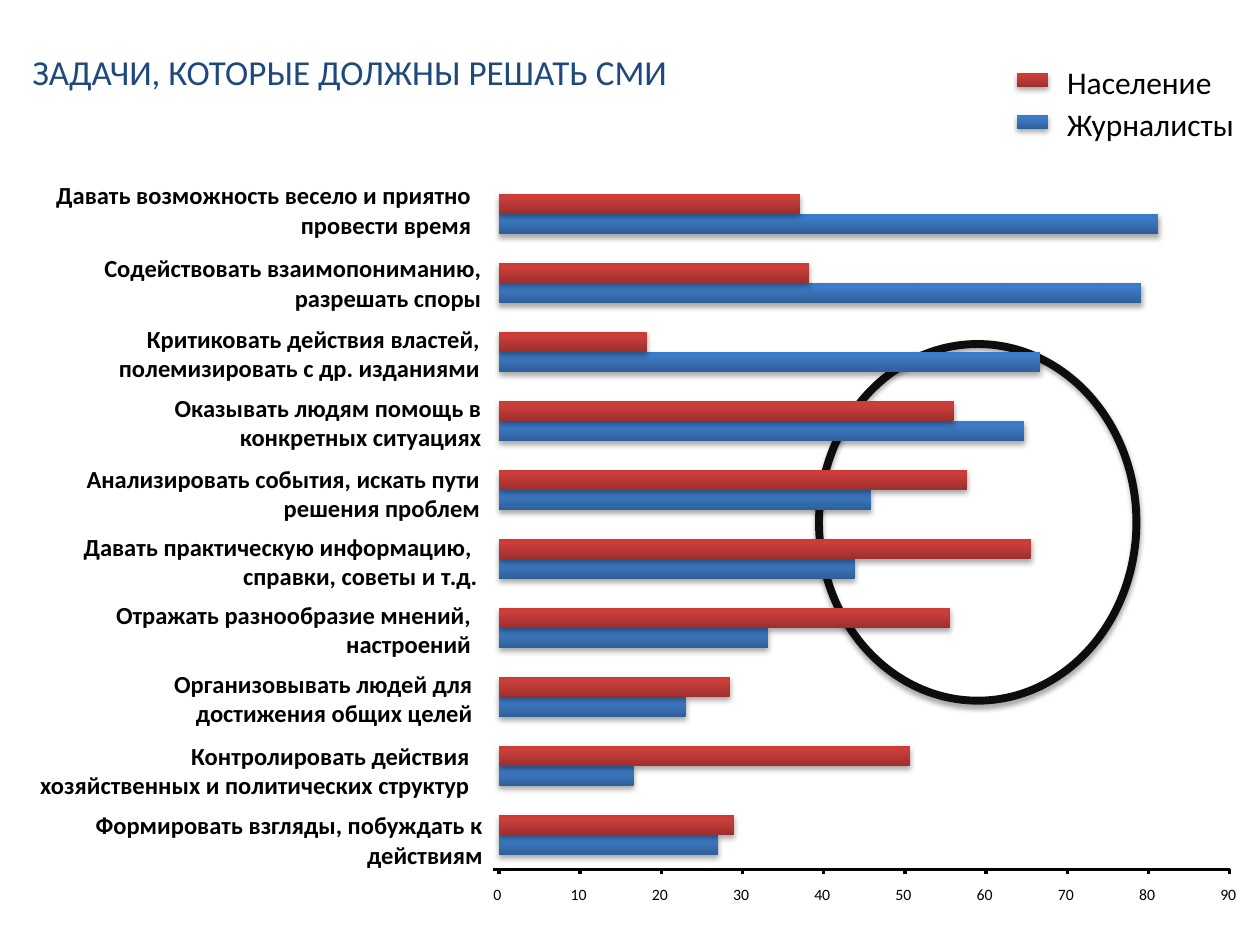
from dataclasses import dataclass

from lxml import etree
from pptx import Presentation
from pptx import util as u
from pptx.dml.color import RGBColor
from pptx.enum import shapes, text
from pptx.oxml.ns import nsdecls


@dataclass(frozen=True)
class Theme:
    font: str = "Calibri"
    title: str = "1F497D"
    ink: str = "000000"
    ring: str = "0D0D0D"
    # Gradient colours at 0, 80 and 100 percent
    red: tuple = ("9C2F2D", "CB3E3A", "CE3B37")
    blue: tuple = ("2F5F99", "3D7CC7", "3A7CCB")
    title_size: int = 20
    legend_size: int = 18
    label_size: int = 14
    tick_size: int = 9


T = Theme()

# Label lines, label left, top and width, share of population, share of journalists
TASKS = [
    (["Давать возможность весело и приятно провести время"],
     17.3, 103, 252, 37.1, 81.2),
    (["Содействовать взаимопониманию, разрешать споры"],
     17.3, 144.7, 257.8, 38.2, 79.1),
    (["Критиковать действия властей, полемизировать с др. изданиями"],
     31.7, 185, 242.6, 18.3, 66.7),
    (["Оказывать людям помощь в конкретных ситуациях"],
     49, 224.6, 226.1, 56, 64.7),
    (["Анализировать события, искать пути решения проблем"],
     43.2, 265, 231.1, 57.7, 45.8),
    (["Давать практическую информацию, ", "справки, советы и т.д."],
     43.9, 303.8, 229, 65.5, 43.8),
    (["Отражать разнообразие мнений, настроений"],
     41, 342.7, 228.2, 55.6, 33.2),
    (["Организовывать людей для достижения общих целей"],
     49, 382.3, 221, 28.4, 23),
    (["Контролировать действия", "хозяйственных и политических структур"],
     18.7, 423.4, 249.8, 50.6, 16.6),
    (["Формировать взгляды, побуждать к действиям"],
     49, 463, 226.8, 29, 27),
]

AXIS_X, AXIS_Y, UNIT = 285.1, 496.8, 4.64
FIRST_BAR, ROW_STEP, BAR_H = 110.9, 39.45, 11.4


def add_shadow(sp):
    sp._element.spPr.append(etree.fromstring(
        f'<a:effectLst {nsdecls("a")}>'
        '<a:outerShdw blurRad="40000" dist="23000" dir="5400000" rotWithShape="0">'
        '<a:srgbClr val="000000"><a:alpha val="35000"/></a:srgbClr>'
        '</a:outerShdw></a:effectLst>'))


def add_bar(s, x, y, w, h, colors):
    sp = s.shapes.add_shape(shapes.MSO_SHAPE.RECTANGLE,
                            u.Pt(x), u.Pt(y), u.Pt(w), u.Pt(h))
    stops = "".join(f'<a:gs pos="{pos}"><a:srgbClr val="{c}"/></a:gs>'
                    for pos, c in zip((0, 80000, 100000), colors))
    sp._element.spPr.append(etree.fromstring(
        f'<a:gradFill {nsdecls("a")} rotWithShape="1"><a:gsLst>{stops}</a:gsLst>'
        '<a:lin ang="16200000" scaled="0"/></a:gradFill>'))
    sp.line.fill.background()
    add_shadow(sp)


def add_ring(s, x, y, w, h):
    sp = s.shapes.add_shape(shapes.MSO_SHAPE.OVAL,
                            u.Pt(x), u.Pt(y), u.Pt(w), u.Pt(h))
    sp.fill.background()
    sp.line.color.rgb = RGBColor.from_string(T.ring)
    sp.line.width = u.Pt(4.5)
    add_shadow(sp)


def add_line(s, x1, y1, x2, y2):
    line = s.shapes.add_connector(shapes.MSO_CONNECTOR.STRAIGHT,
                                  u.Pt(x1), u.Pt(y1), u.Pt(x2), u.Pt(y2))
    line.line.color.rgb = RGBColor.from_string(T.ink)
    line.line.width = u.Pt(0)
    line._element.spPr.append(etree.fromstring(f'<a:effectLst {nsdecls("a")}/>'))


def add_text(s, lines, x, y, w, h, size, color=T.ink, bold=False,
             align=text.PP_ALIGN.LEFT, wrap=False, inset=(0, 0)):
    tf = s.shapes.add_textbox(u.Pt(x), u.Pt(y), u.Pt(w), u.Pt(h)).text_frame
    tf.word_wrap = wrap
    tf.auto_size = text.MSO_AUTO_SIZE.SHAPE_TO_FIT_TEXT
    tf.margin_left = tf.margin_right = u.Pt(inset[0])
    tf.margin_top = tf.margin_bottom = u.Pt(inset[1])
    for i, line in enumerate(lines):
        p = tf.paragraphs[0] if i == 0 else tf.add_paragraph()
        p.alignment = align
        r = p.add_run()
        r.text = line
        r.font.name = T.font
        r.font.size = u.Pt(size)
        r.font.bold = bold
        r.font.color.rgb = RGBColor.from_string(color)


def add_axis(s):
    add_line(s, AXIS_X - 3.6, AXIS_Y, AXIS_X + 90 * UNIT, AXIS_Y)
    for value in range(0, 91, 10):
        x = AXIS_X + value * UNIT
        add_line(s, x, AXIS_Y + 2.9, x, AXIS_Y)
        w = 4.6 * len(str(value))
        add_text(s, [str(value)], x - 0.8 - w / 2, 505.4, w, 11, T.tick_size)


def main():
    prs = Presentation()
    prs.slide_width, prs.slide_height = u.Pt(720), u.Pt(540)
    s = prs.slides.add_slide(prs.slide_layouts[6])

    # Highlight ring, behind the bars
    add_ring(s, 468, 196.6, 181.4, 203.8)

    # Task labels
    for lines, x, y, w, _, _ in TASKS:
        add_text(s, lines, x, y, w, 33.8, T.label_size, bold=True,
                 align=text.PP_ALIGN.RIGHT, wrap=len(lines) == 1)

    # Bars: journalists first, population over them
    for column, offset, colors in ((5, BAR_H, T.blue), (4, 0, T.red)):
        for i, task in enumerate(TASKS):
            add_bar(s, AXIS_X, FIRST_BAR + i * ROW_STEP + offset,
                    task[column] * UNIT, BAR_H, colors)

    add_axis(s)

    # Legend
    for i, (name, w, colors) in enumerate((("Население", 83.5, T.red),
                                           ("Журналисты", 96.5, T.blue))):
        y = 36 + i * 23.9
        add_bar(s, 581, y + 5.8, 18, 7.9, colors)
        add_text(s, [name], 609.8, y, w, 21.6, T.legend_size)

    # Title
    add_text(s, ["ЗАДАЧИ, КОТОРЫЕ ДОЛЖНЫ РЕШАТЬ СМИ"], 11.5, 25.2, 523.4, 31.5,
             T.title_size, T.title, wrap=True, inset=(7.2, 3.6))

    prs.save("out.pptx")


if __name__ == "__main__":
    main()
